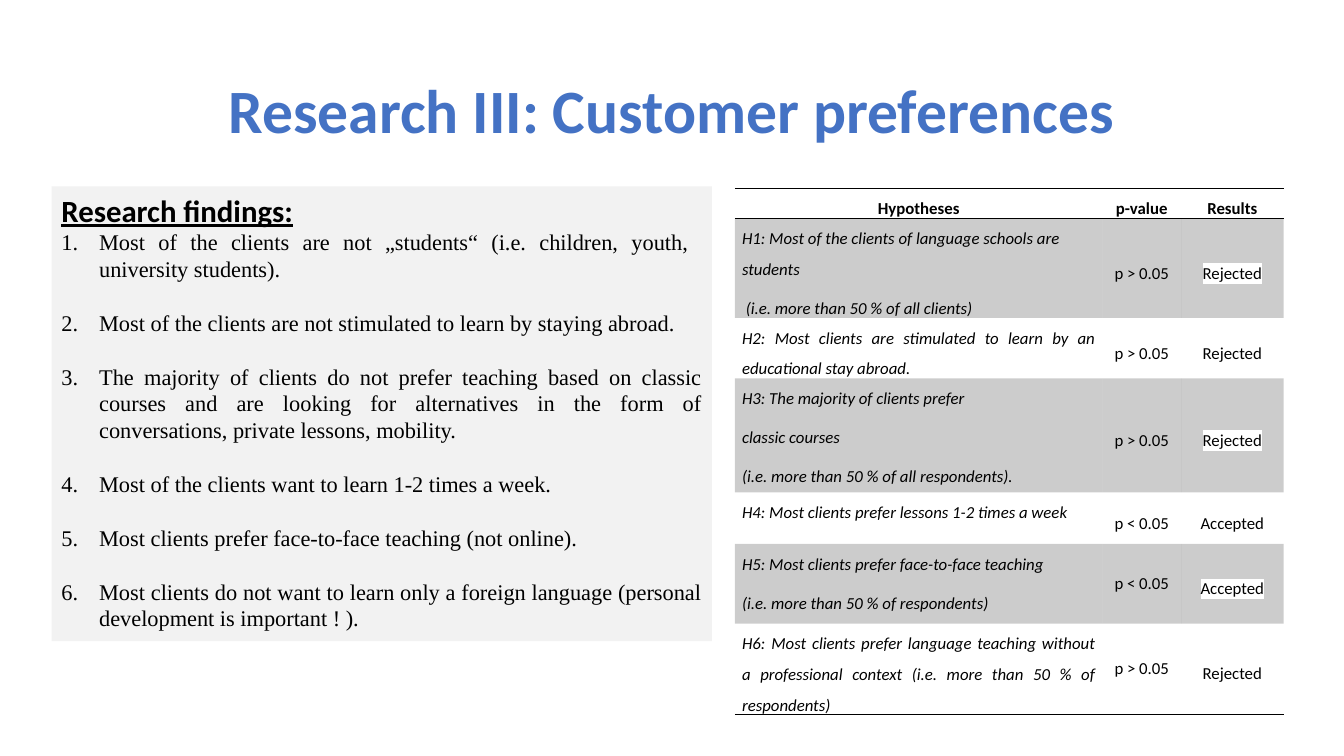
from dataclasses import dataclass

from lxml.etree import SubElement
from pptx import Presentation
from pptx.dml.color import RGBColor
from pptx.enum.shapes import MSO_SHAPE
from pptx.enum.text import MSO_ANCHOR, PP_ALIGN
from pptx.oxml import parse_xml
from pptx.oxml.ns import nsdecls, qn
from pptx.util import Cm, Pt


@dataclass(frozen=True)
class Theme:
    title_color: str = "4472C4"
    text_color: str = "000000"
    panel_color: str = "F2F2F2"
    highlight_color: str = "FFFFFF"
    band_alpha: int = 20000
    heading_font: str = "Calibri"
    body_font: str = "Times New Roman"
    title_size: int = 44
    heading_size: int = 22
    finding_size: int = 16
    table_size: int = 12


THEME = Theme()
NO_STYLE_NO_GRID = "{2D5ABB26-0587-4C30-8999-92F81FD0307C}"

FINDINGS = [
    "Most of the clients are not „students“ (i.e. children, youth, \nuniversity students).",
    "Most of the clients are not stimulated to learn by staying abroad.",
    "The majority of clients do not prefer teaching based on classic courses and are "
    "looking for alternatives in the form of conversations, private lessons, mobility.",
    "Most of the clients want to learn 1-2 times a week.",
    "Most clients prefer face-to-face teaching (not online).",
    "Most clients do not want to learn only a foreign language "
    "(personal development is important ! ).",
]

HEADINGS = ["Hypotheses", "p-value", "Results"]
LEFT, JUSTIFY = PP_ALIGN.LEFT, PP_ALIGN.JUSTIFY
# Hypothesis paragraphs, their alignment, p-value, its line spacing, result, row height in cm
HYPOTHESES = [
    (["H1: Most of the clients of language schools are students\n"
      " (i.e. more than 50 % of all clients)"], LEFT, "p > 0.05", 1.5, "Rejected", 2.01),
    (["H2: Most clients are stimulated to learn by an educational stay abroad."],
     JUSTIFY, "p > 0.05", 1.5, "Rejected", 1.3),
    (["H3: The majority of clients prefer \nclassic courses",
      "(i.e. more than 50 % of all respondents)."], JUSTIFY, "p > 0.05", 1.5, "Rejected", 2.87),
    (["H4: Most clients prefer lessons 1-2 times a week"],
     JUSTIFY, "p < 0.05", 1.5, "Accepted", 1.3),
    (["H5: Most clients prefer face-to-face teaching \n(i.e. more than 50 % of respondents)"],
     LEFT, "p < 0.05", 1, "Accepted", 2.01),
    (["H6: Most clients prefer language teaching without a professional context "
      "(i.e. more than 50 % of respondents)"], JUSTIFY, "p > 0.05", 1, "Rejected", 2.01),
]


def style_runs(paragraph, size, font=THEME.heading_font, color=THEME.text_color,
               bold=False, italic=False, underline=False):
    for run in paragraph.runs:
        run.font.size = Pt(size)
        run.font.name = font
        run.font.bold = bold
        run.font.italic = italic
        run.font.underline = underline
        run.font.color.rgb = RGBColor.from_string(color)


def highlight(paragraph):
    for run in paragraph.runs:
        solid_fill = run.font._element.find(qn("a:solidFill"))
        solid_fill.addnext(parse_xml(
            f'<a:highlight {nsdecls("a")}><a:srgbClr val="{THEME.highlight_color}"/></a:highlight>'))


def number(paragraph):
    properties = paragraph._p.get_or_add_pPr()
    properties.set("marL", str(Cm(0.95)))
    properties.set("indent", str(-Cm(0.95)))
    SubElement(properties, qn("a:buFont"), typeface="+mj-lt")
    SubElement(properties, qn("a:buAutoNum"), type="arabicPeriod")


def add_title(slide, left, top, width, height):
    text_frame = slide.shapes.add_textbox(left, top, width, height).text_frame
    text_frame.word_wrap = True
    text_frame.vertical_anchor = MSO_ANCHOR.MIDDLE
    paragraph = text_frame.paragraphs[0]
    paragraph.text = "Research III: Customer preferences"
    paragraph.alignment = PP_ALIGN.CENTER
    paragraph.line_spacing = 0.9
    style_runs(paragraph, THEME.title_size, color=THEME.title_color, bold=True)


def add_findings(slide, left, top, width, height):
    panel = slide.shapes.add_shape(MSO_SHAPE.RECTANGLE, left, top, width, height)
    panel.shadow.inherit = False
    panel.fill.solid()
    panel.fill.fore_color.rgb = RGBColor.from_string(THEME.panel_color)
    panel.line.fill.background()
    text_frame = panel.text_frame
    text_frame.word_wrap = True
    text_frame.vertical_anchor = MSO_ANCHOR.TOP
    heading = text_frame.paragraphs[0]
    heading.text = "Research findings:"
    heading.alignment = JUSTIFY
    style_runs(heading, THEME.heading_size, bold=True, underline=True)
    for finding in FINDINGS:
        paragraph = text_frame.add_paragraph()
        paragraph.text = finding
        paragraph.alignment = JUSTIFY
        paragraph.line_spacing = Pt(19.2)
        if finding != FINDINGS[-1]:
            paragraph.space_after = Pt(19.2)
        number(paragraph)
        style_runs(paragraph, THEME.finding_size, THEME.body_font)


def fill_cell(cell, texts, alignment=PP_ALIGN.CENTER, anchor=MSO_ANCHOR.MIDDLE,
              line_spacing=1.5, space_after=6, **style):
    cell.margin_left = cell.margin_right = Cm(0.18)
    cell.margin_top = cell.margin_bottom = 0
    cell.vertical_anchor = anchor
    cell.text_frame.text = texts[0]
    for text in texts[1:]:
        cell.text_frame.add_paragraph().text = text
    for paragraph in cell.text_frame.paragraphs:
        paragraph.alignment = alignment
        paragraph.line_spacing = line_spacing
        paragraph.space_after = Pt(space_after)
        style_runs(paragraph, THEME.table_size, **style)


def shade(cell):
    cell.fill.solid()
    cell.fill.fore_color.rgb = RGBColor.from_string(THEME.text_color)
    color = cell._tc.tcPr.find(qn("a:solidFill"))[0]
    SubElement(color, qn("a:alpha"), val=str(THEME.band_alpha))


def rule(cell, *sides):
    """Draw thin lines on the given sides, in the order T, B."""
    for position, side in enumerate(sides):
        cell._tc.get_or_add_tcPr().insert(position, parse_xml(
            f'<a:ln{side} {nsdecls("a")} w="{Pt(1)}"><a:solidFill>'
            f'<a:srgbClr val="{THEME.text_color}"/></a:solidFill></a:ln{side}>'))


def add_hypotheses(slide, left, top, width, height):
    table = slide.shapes.add_table(len(HYPOTHESES) + 1, len(HEADINGS),
                                   left, top, width, height).table
    table._tbl.tblPr.find(qn("a:tableStyleId")).text = NO_STYLE_NO_GRID
    table.first_row = table.horz_banding = False
    for column, share in zip(table.columns, (0.67, 0.143, 0.187)):
        column.width = int(width * share)

    table.rows[0].height = Cm(0.61)
    for column, heading in enumerate(HEADINGS):
        cell = table.cell(0, column)
        fill_cell(cell, [heading], anchor=MSO_ANCHOR.TOP, space_after=12, bold=True)
        cell.text_frame.paragraphs[0].space_before = Pt(12)
        cell.fill.background()
        rule(cell, "T", "B")

    for row, (texts, alignment, p_value, spacing, result, row_height) in enumerate(HYPOTHESES, 1):
        table.rows[row].height = Cm(row_height)
        cells = [table.cell(row, column) for column in range(len(HEADINGS))]
        fill_cell(cells[0], texts, alignment, MSO_ANCHOR.TOP, italic=True)
        fill_cell(cells[1], [p_value], line_spacing=spacing,
                  space_after=6 if spacing > 1 else 0)
        fill_cell(cells[2], [result])
        highlight(cells[2].text_frame.paragraphs[0])
        for cell in cells:
            if row % 2:
                shade(cell)
            else:
                cell.fill.background()
            if row == len(HYPOTHESES):
                rule(cell, "B")


def main():
    presentation = Presentation()
    presentation.slide_width, presentation.slide_height = Cm(33.87), Cm(19.05)
    slide = presentation.slides.add_slide(presentation.slide_layouts[6])
    add_title(slide, Cm(2.33), Cm(1.01), Cm(29.21), Cm(3.68))
    add_hypotheses(slide, Cm(18.52), Cm(4.75), Cm(13.83), Cm(12.11))
    add_findings(slide, Cm(1.3), Cm(4.7), Cm(16.64), Cm(11.46))
    presentation.save("out.pptx")


if __name__ == "__main__":
    main()
